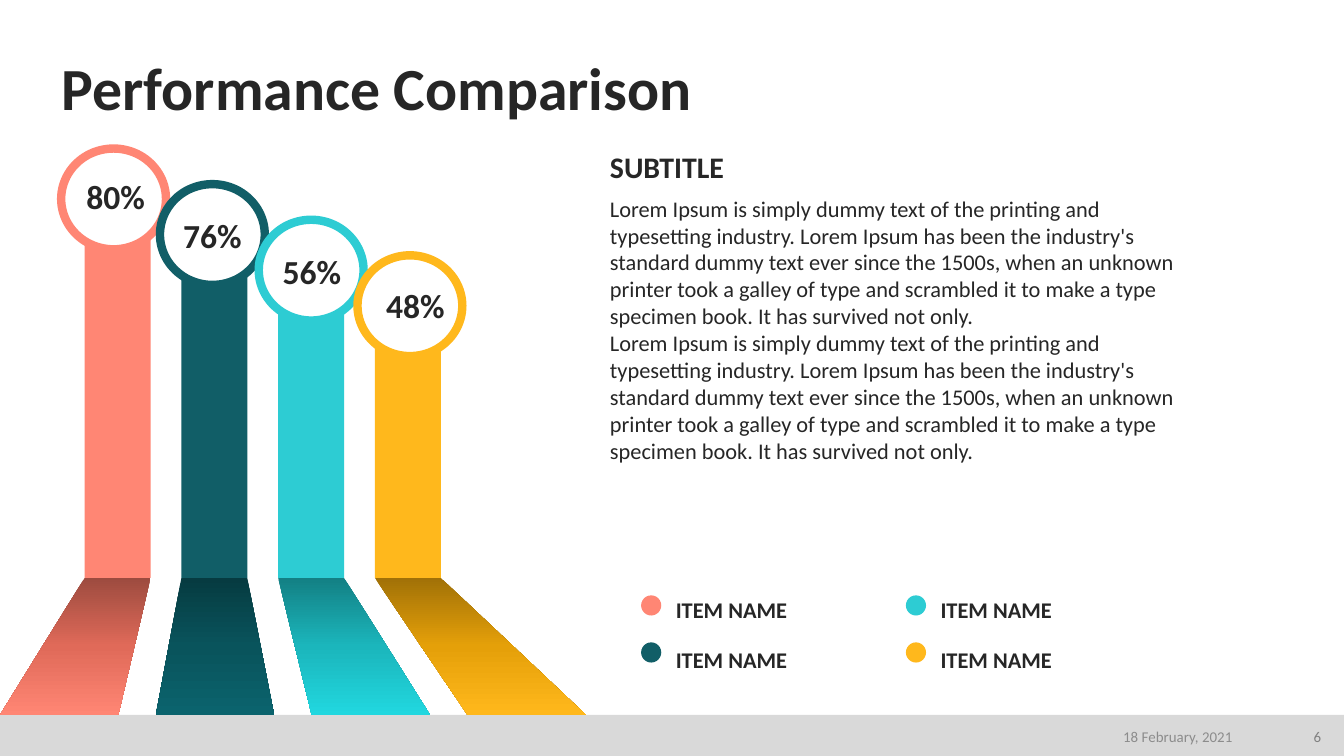
from copy import deepcopy
from dataclasses import dataclass

from pptx import Presentation
from pptx.dml.color import RGBColor
from pptx.enum.shapes import MSO_SHAPE
from pptx.enum.text import MSO_ANCHOR, MSO_AUTO_SIZE, PP_ALIGN
from pptx.oxml.ns import qn
from pptx.util import Pt

PX = 4572  # EMU per px, 200 px to the inch


@dataclass(frozen=True)
class Theme:
    font: str = "Calibri"
    ink: str = "262626"
    paper: str = "FFFFFF"
    band: str = "D9D9D9"
    date: str = "8C8C8C"
    page: str = "808080"
    coral: str = "FF8674"
    teal: str = "115E67"
    aqua: str = "2DCCD3"
    gold: str = "FFB81C"
    title: int = 32
    value: int = 18
    head: int = 16
    body: int = 12
    small: int = 8


T = Theme()

# Colour, value, top of pole, shades of the floor strip, place of the label
BARS = [
    (T.coral, "80%", 34, ("9D4B3F", "E06A59", "FF8674"), (58, 32)),
    (T.teal, "76%", 112, ("063B41", "09545C", "0B636D"), (202, 90)),
    (T.aqua, "56%", 188, ("138084", "1BB6BC", "21D7DF"), (350, 144)),
    (T.gold, "48%", 234, ("A17107", "E5A009", "FFB81C"), (504, 194)),
]

LOREM = (
    "Lorem Ipsum is simply dummy text of the printing and typesetting industry. "
    "Lorem Ipsum has been the industry's standard dummy text ever since the 1500s, "
    "when an unknown printer took a galley of type and scrambled it to make a type "
    "specimen book. It has survived not only."
)


def rgb(code):
    return RGBColor.from_string(code)


def add_text(slide, box, lines, size, color=T.ink, bold=False,
             align=PP_ALIGN.LEFT, anchor=MSO_ANCHOR.TOP):
    shape = slide.shapes.add_textbox(*(n * PX for n in box))
    frame = shape.text_frame
    frame.word_wrap = True
    frame.auto_size = MSO_AUTO_SIZE.NONE
    frame.vertical_anchor = anchor
    frame.text = lines
    for para in frame.paragraphs:
        para.alignment = align
        for run in para.runs:
            font = run.font
            font.name, font.size, font.bold = T.font, Pt(size), bold
            font.color.rgb = rgb(color)
    return frame


def add_solid(slide, kind, box, fill, line=None):
    shape = slide.shapes.add_shape(kind, *(n * PX for n in box))
    shape.shadow.inherit = False
    shape.fill.solid()
    shape.fill.fore_color.rgb = rgb(fill)
    if line:
        shape.line.color.rgb = rgb(line)
        shape.line.width = Pt(4.5)
    else:
        shape.line.fill.background()


def add_outline(slide, points):
    form = slide.shapes.build_freeform(*points[0], scale=PX)
    form.add_line_segments(points[1:], close=True)
    shape = form.convert_to_shape()
    shape.shadow.inherit = False
    shape.line.fill.background()
    return shape


def shade(shape, colors):
    """Fill from top to bottom with evenly spaced colours."""
    shape.fill.gradient()
    shape.fill.gradient_angle = 270
    stops = shape._element.spPr.find(".//" + qn("a:gsLst"))
    while len(stops) < len(colors):
        stops.append(deepcopy(stops[-1]))
    for i, (stop, color) in enumerate(zip(shape.fill.gradient_stops, colors)):
        stop.position = i / (len(colors) - 1)
        stop.color.rgb = rgb(color)


def draw_bars(slide, x, y, height):
    base, wide, foot = y + 640, 98, 176
    # Poles and the strips they cast on the floor
    for i, (color, _, top, shades, _) in enumerate(BARS):
        left = x + 126 + 144 * i
        right, tip = left + wide, y + top
        pole = add_outline(slide, [
            (left, base), (left, tip + 50), (left + wide // 2, tip),
            (right, tip + 50), (right, base)])
        pole.fill.solid()
        pole.fill.fore_color.rgb = rgb(color)
        toe = x + 232 * i
        strip = add_outline(slide, [
            (left, base), (right, base),
            (toe + foot, y + height), (toe, y + height)])
        shade(strip, shades)
    # Rings
    for i, (color, *_) in enumerate(BARS):
        add_solid(slide, MSO_SHAPE.OVAL,
                  (x + 91 + 147 * i, y + 1 + 53 * i, 156, 150), T.paper, color)
    # Values
    for _, value, _, _, (dx, dy) in BARS:
        add_text(slide, (x + dx, y + dy, 228, 76), value, T.value,
                 bold=True, align=PP_ALIGN.CENTER)


def draw_copy(slide, x, y, width):
    add_text(slide, (x, y + 68, width, 504), f"{LOREM}\n{LOREM}", T.body)
    add_text(slide, (x, y, 418, 74), "SUBTITLE", T.head, bold=True)


def draw_legend(slide, x, y):
    # Fills column by column
    for i, (color, *_) in enumerate(BARS):
        col, row = divmod(i, 2)
        left = x + 394 * col
        add_solid(slide, MSO_SHAPE.OVAL, (left, y + 8 + 70 * row, 30, 30), color)
        add_text(slide, (left + 32, y + 74 * row, 272, 60), "ITEM NAME",
                 T.body, bold=True)


def draw_title(slide, x, y, width, height):
    frame = add_text(slide, (x, y, width, height), "Performance Comparison",
                     T.title, bold=True, anchor=MSO_ANCHOR.BOTTOM)
    frame.margin_left = frame.margin_right = 0
    frame.margin_top = frame.margin_bottom = 0
    frame.paragraphs[0].line_spacing = 0.9


def draw_footer(slide, x, y, width, height):
    add_solid(slide, MSO_SHAPE.RECTANGLE, (x, y, width, height), T.band)
    parts = [(1404, 450, "18 February, 2021", T.date), (1912, 74, "6", T.page)]
    for dx, wide, words, color in parts:
        add_text(slide, (x + dx, y + 6, wide, 52), words, T.small, color,
                 align=PP_ALIGN.RIGHT, anchor=MSO_ANCHOR.MIDDLE)


def main():
    deck = Presentation()
    deck.slide_width, deck.slide_height = 2000 * PX, 1125 * PX
    slide = deck.slides.add_slide(deck.slide_layouts[6])
    draw_footer(slide, 0, 1064, 2000, 61)
    draw_bars(slide, 0, 220, 844)
    draw_copy(slide, 888, 212, 912)
    draw_legend(slide, 954, 878)
    draw_title(slide, 92, 80, 1820, 104)
    deck.save("out.pptx")


if __name__ == "__main__":
    main()
